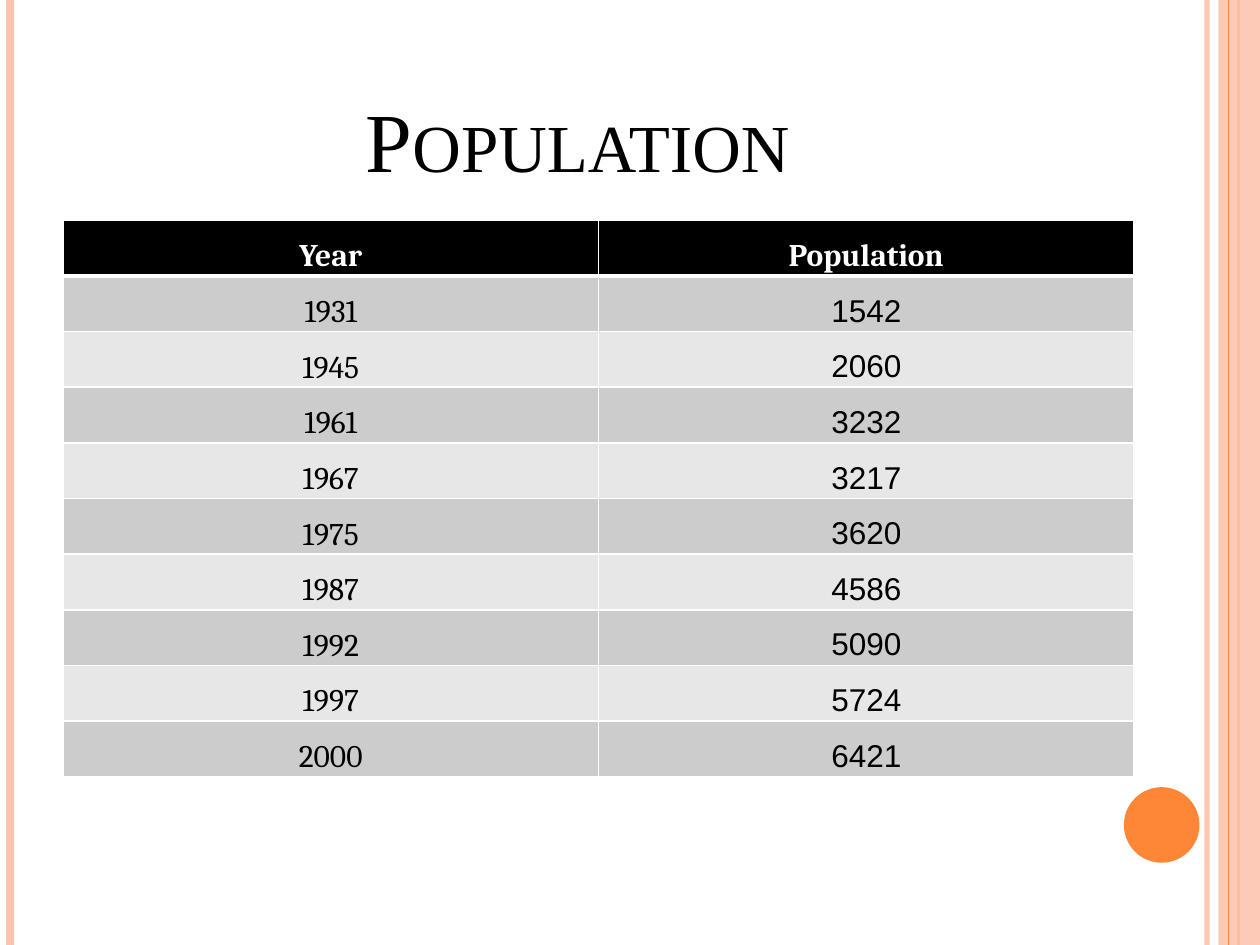
"""Build a slide with a table of population by year."""
from dataclasses import dataclass

import pptx
import pptx.dml.color
import pptx.enum.shapes
import pptx.enum.text
import pptx.oxml.ns
import pptx.oxml.xmlchemy
import pptx.util
from lxml import etree

WIDTH, HEIGHT = pptx.util.Inches(10), pptx.util.Inches(7.5)
COLORS = {
    "paper": "FFFFFF", "ink": "000000", "peach": "FEC3AE", "orange": "FE8637",
    "odd": "CCCCCC", "even": "E7E7E7",
}
HEADINGS = ("Year", "Population")
CENSUS = {
    1931: 1542, 1945: 2060, 1961: 3232, 1967: 3217, 1975: 3620,
    1987: 4586, 1992: 5090, 1997: 5724, 2000: 6421,
}
CELL_FORMAT = {
    "margin_left": pptx.util.Inches(0.07), "margin_right": pptx.util.Inches(0.07),
    "margin_top": 0, "margin_bottom": 0,
}
PARAGRAPH_FORMAT = {
    "alignment": pptx.enum.text.PP_ALIGN.CENTER,
    "line_spacing": 1.5, "space_after": pptx.util.Pt(10),
}
TITLE_FONT = {"name": "Times New Roman", "size": pptx.util.Pt(48), "bold": False}
CELL_FONT = {"name": "Cambria", "size": pptx.util.Pt(18)}


@dataclass(frozen=True)
class Stripe:
    x: float
    color: str
    weight: float
    opacity: int = 100


@dataclass(frozen=True)
class Area:
    left: float
    top: float
    width: float
    height: float

    def lengths(self) -> tuple:
        return (int(self.left * WIDTH), int(self.top * HEIGHT),
                int(self.width * WIDTH), int(self.height * HEIGHT))


BACK_STRIPES = (
    Stripe(0.958, "peach", 3, 93), Stripe(0.008, "peach", 4.5), Stripe(0.983, "orange", 1.5),
)
FRONT_STRIPE = Stripe(0.975, "orange", 0.75)
BAND = Area(0.967, 0, 0.033, 1)
DOT = Area(0.892, 0.833, 0.06, 0.08)
TITLE = Area(0.05, 0.04, 0.817, 0.167)
TABLE = Area(0.05, 0.233, 0.85, 0.589)


def rgb(color: str) -> pptx.dml.color.RGBColor:
    return pptx.dml.color.RGBColor.from_string(COLORS[color])


def apply(target, values: dict) -> None:
    for name, value in values.items():
        setattr(target, name, value)


def add_child(parent, tag: str, **attributes):
    return etree.SubElement(parent, pptx.oxml.ns.qn(tag), **attributes)


def set_opacity(properties, percent: int) -> None:
    for color in properties.iter(pptx.oxml.ns.qn("a:srgbClr")):
        add_child(color, "a:alpha", val=str(percent * 1000))


def draw_stripe(slide, stripe: Stripe) -> None:
    x = int(stripe.x * WIDTH)
    line = slide.shapes.add_connector(
        pptx.enum.shapes.MSO_CONNECTOR.STRAIGHT, x, 0, x, HEIGHT)
    line.line.color.rgb = rgb(stripe.color)
    line.line.width = pptx.util.Pt(stripe.weight)
    properties = line._element.spPr
    if stripe.opacity < 100:
        set_opacity(properties, stripe.opacity)
    add_child(properties, "a:effectLst")


def draw_area(slide, kind, area: Area, color: str, opacity: int = 100) -> None:
    shape = slide.shapes.add_shape(kind, *area.lengths())
    shape.shadow.inherit = False
    shape.fill.solid()
    shape.fill.fore_color.rgb = rgb(color)
    shape.line.fill.background()
    if opacity < 100:
        set_opacity(shape._element.spPr, opacity)


def draw_title(slide, text: str) -> None:
    title = slide.shapes.title
    apply(title, dict(zip(("left", "top", "width", "height"), TITLE.lengths())))
    title.text_frame.vertical_anchor = pptx.enum.text.MSO_ANCHOR.BOTTOM
    paragraph = title.text_frame.paragraphs[0]
    paragraph.alignment = pptx.enum.text.PP_ALIGN.CENTER
    run = paragraph.add_run()
    run.text = text
    apply(run.font, TITLE_FONT)
    run.font.color.rgb = rgb("ink")
    run._r.get_or_add_rPr().set("cap", "small")


def draw_border(cell, side: str, weight: float) -> None:
    border = add_child(cell._tc.get_or_add_tcPr(), f"a:{side}", w=str(pptx.util.Pt(weight)))
    fill = add_child(border, "a:solidFill")
    add_child(fill, "a:srgbClr", val=COLORS["paper"])


def fill_cell(cell, text: str, row: int, column: int) -> None:
    heading = row == 0
    apply(cell, CELL_FORMAT)
    for side in ("lnL", "lnR", "lnT", "lnB"):
        heavy = (heading and side == "lnB") or (row == 1 and side == "lnT")
        draw_border(cell, side, 3 if heavy else 1)
    cell.fill.solid()
    cell.fill.fore_color.rgb = rgb("ink" if heading else "odd" if row % 2 else "even")
    paragraph = cell.text_frame.paragraphs[0]
    apply(paragraph, PARAGRAPH_FORMAT)
    run = paragraph.add_run()
    run.text = text
    apply(run.font, CELL_FONT)
    run.font.bold = heading
    run.font.color.rgb = rgb("paper" if heading else "ink")
    if column == 1 and not heading:
        paragraph._p.get_or_add_pPr().set("rtl", "1")
        add_child(run._r.get_or_add_rPr(), "a:cs", typeface="Arial")


def draw_table(slide) -> None:
    rows = [HEADINGS, *CENSUS.items()]
    table = slide.shapes.add_table(len(rows), len(HEADINGS), *TABLE.lengths()).table
    for row, values in enumerate(rows):
        for column, value in enumerate(values):
            fill_cell(table.cell(row, column), str(value), row, column)


def main() -> None:
    deck = pptx.Presentation()
    deck.slide_width, deck.slide_height = WIDTH, HEIGHT
    slide = deck.slides.add_slide(deck.slide_layouts[5])
    for stripe in BACK_STRIPES:
        draw_stripe(slide, stripe)
    shapes = pptx.enum.shapes.MSO_SHAPE
    draw_area(slide, shapes.RECTANGLE, BAND, "peach", 87)
    draw_stripe(slide, FRONT_STRIPE)
    draw_area(slide, shapes.OVAL, DOT, "orange")
    draw_title(slide, "Population")
    draw_table(slide)
    deck.save("out.pptx")


if __name__ == "__main__":
    main()
